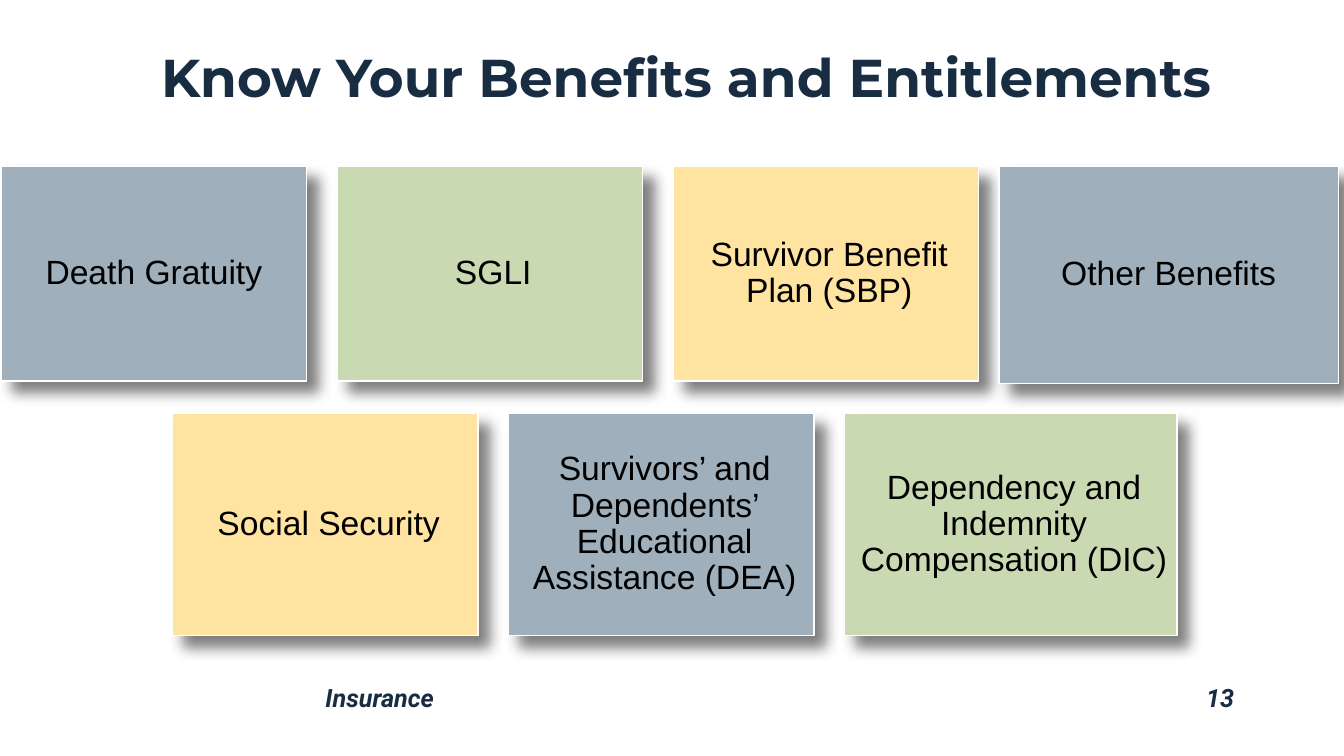
import dataclasses

import lxml.etree
import pptx
import pptx.dml.color
import pptx.enum.shapes
import pptx.enum.text
import pptx.oxml.ns
import pptx.util

RGBColor = pptx.dml.color.RGBColor
Align = pptx.enum.text.PP_ALIGN
Anchor = pptx.enum.text.MSO_ANCHOR

NAVY = RGBColor(0x18, 0x2C, 0x42)
SLATE = RGBColor(0x9F, 0xAF, 0xBB)
SAGE = RGBColor(0xC9, 0xDA, 0xB3)
SAND = RGBColor(0xFE, 0xE3, 0xA1)
BLACK = RGBColor(0x00, 0x00, 0x00)
WHITE = RGBColor(0xFF, 0xFF, 0xFF)

WIDTH, HEIGHT = 13.33, 7.5
COLUMN = WIDTH / 4
ROW = 2.45
GRID_LEFT, GRID_TOP = 0.01, 1.65


@dataclasses.dataclass
class Benefit:
    """A card; places and sizes count grid columns and rows."""
    label: str
    fill: RGBColor
    column: float
    row: int
    wide: float = 0.91
    high: float = 0.87
    label_shift: float = 0.01


BENEFITS = [
    Benefit("Death Gratuity", SLATE, 0, 0, label_shift=0),
    Benefit("SGLI", SAGE, 1, 0),
    Benefit("Survivor Benefit Plan (SBP)", SAND, 2, 0),
    Benefit("Other Benefits", SLATE, 2.97, 0, wide=1.01, high=0.88, label_shift=0),
    Benefit("Social Security", SAND, 0.51, 1, high=0.9),
    Benefit("Survivors’ and Dependents’ Educational Assistance (DEA)", SLATE,
            1.51, 1, high=0.9),
    Benefit("Dependency and Indemnity Compensation (DIC)", SAGE,
            2.51, 1, wide=0.99, high=0.9),
]


def inches(*lengths):
    return [pptx.util.Inches(length) for length in lengths]


def add_shadow(card):
    """Cast a soft black shadow down and to the right."""
    card.shadow.inherit = False
    qn = pptx.oxml.ns.qn
    effects = card.element.spPr.find(qn("a:effectLst"))
    shadow = lxml.etree.SubElement(
        effects, qn("a:outerShdw"),
        blurRad=str(pptx.util.Pt(10)), dist=str(pptx.util.Pt(11)),
        dir=str(45 * 60000), algn="tl", rotWithShape="0")
    colour = lxml.etree.SubElement(shadow, qn("a:srgbClr"), val=str(BLACK))
    lxml.etree.SubElement(colour, qn("a:alpha"), val="49000")


def add_text(slide, box, wording, size, font, colour,
             align=Align.LEFT, anchor=Anchor.TOP, bold=False, italic=False):
    frame = slide.shapes.add_textbox(*inches(*box)).text_frame
    frame.word_wrap = True
    frame.vertical_anchor = anchor
    paragraph = frame.paragraphs[0]
    paragraph.alignment = align
    paragraph.line_spacing = 0.9
    run = paragraph.add_run()
    run.text = wording
    run.font.size = pptx.util.Pt(size)
    run.font.name = font
    run.font.color.rgb = colour
    run.font.bold = bold
    run.font.italic = italic


def add_benefit(slide, benefit):
    left = GRID_LEFT + benefit.column * COLUMN
    top = GRID_TOP + benefit.row * ROW
    wide, high = benefit.wide * COLUMN, benefit.high * ROW
    card = slide.shapes.add_shape(pptx.enum.shapes.MSO_SHAPE.RECTANGLE,
                                  *inches(left, top, wide, high))
    card.fill.solid()
    card.fill.fore_color.rgb = benefit.fill
    card.line.color.rgb = WHITE
    card.line.width = pptx.util.Pt(1)
    add_shadow(card)
    label_left = left + benefit.label_shift * COLUMN
    add_text(slide, (label_left, top, wide, high), benefit.label, 24, "Arial",
             BLACK, Align.CENTER, Anchor.MIDDLE)


def add_footer(slide, left, width, wording, align):
    add_text(slide, (left, 0.9 * HEIGHT, width, 0.05 * HEIGHT), wording, 18,
             "Roboto", NAVY, align, bold=True, italic=True)


def main():
    deck = pptx.Presentation()
    deck.slide_width, deck.slide_height = inches(WIDTH, HEIGHT)
    slide = deck.slides.add_slide(deck.slide_layouts[6])
    add_text(slide, (1.5, 0.11, 11.21, 1.02), "Know Your Benefits and Entitlements",
             38, "Montserrat", NAVY, anchor=Anchor.BOTTOM, bold=True)
    for benefit in BENEFITS:
        add_benefit(slide, benefit)
    add_footer(slide, 3.13, 7.63, "Insurance", Align.LEFT)
    add_footer(slide, 10.76, 1.58, "13", Align.RIGHT)
    deck.save("out.pptx")


if __name__ == "__main__":
    main()
